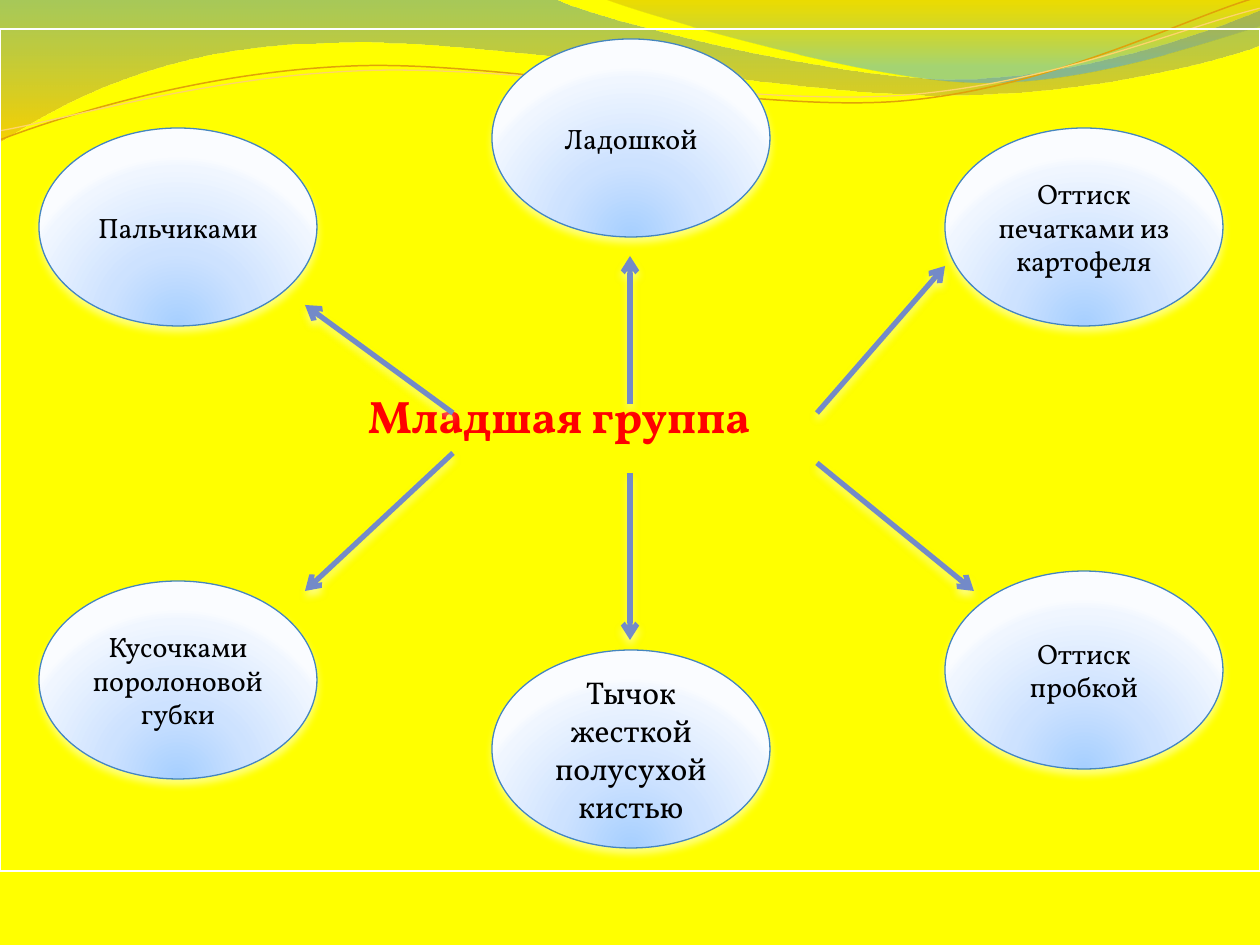
"""Builds a mind map slide of painting techniques for the youngest group."""
from lxml import etree
from pptx import Presentation
from pptx.dml.color import RGBColor
from pptx.enum.shapes import MSO_CONNECTOR, MSO_SHAPE
from pptx.enum.text import MSO_ANCHOR, PP_ALIGN
from pptx.oxml import parse_xml
from pptx.oxml.ns import qn
from pptx.util import Pt

STRAIGHT, OVAL, RECTANGLE = MSO_CONNECTOR.STRAIGHT, MSO_SHAPE.OVAL, MSO_SHAPE.RECTANGLE
TOP, MIDDLE = MSO_ANCHOR.TOP, MSO_ANCHOR.MIDDLE
LEFT, CENTER = PP_ALIGN.LEFT, PP_ALIGN.CENTER
YELLOW = RGBColor(0xFF, 0xFF, 0x00)
WHITE = RGBColor(0xFF, 0xFF, 0xFF)
BLACK = RGBColor(0x00, 0x00, 0x00)
RED = RGBColor(0xFF, 0x00, 0x00)
ARROW_BLUE = RGBColor(0x73, 0x8A, 0xC8)
OVAL_BLUE = RGBColor(0x45, 0x86, 0xBE)
ORANGE = RGBColor(0xE0, 0xA2, 0x09)
PALE_ORANGE = RGBColor(0xFE, 0xD4, 0x6B)
DRAWING = "http://schemas.openxmlformats.org/drawingml/2006/main"
FONT = "Vollkorn"
WIDTH, HEIGHT = 1260, 945
SCALE = 9144000 / WIDTH

TITLE = "Младшая группа"
FRAME = (0, 29, 1260, 842)
TITLE_INSET = (368, 359)
OVAL_SIZE = (278, 198)
TECHNIQUES = [
    ("Пальчиками", 39, 128, 16),
    ("Ладошкой", 492, 39, 16),
    ("Оттиск печатками из картофеля", 945, 128, 16),
    ("Кусочками поролоновой губки", 39, 581, 16),
    ("Тычок жесткой полусухой кистью", 492, 650, 18),
    ("Оттиск пробкой", 945, 571, 16),
]
ARROWS = [
    (453, 413, 305, 305),
    (817, 463, 974, 591),
    (453, 453, 305, 591),
    (817, 413, 945, 266),
    (630, 473, 630, 640),
    (630, 404, 630, 256),
]
OVAL_STOPS = [(0, "A6CFFF", 100), (43, "CDE2FF", 100), (93, "F0F6FF", 100), (100, "FAFCFF", 100)]
OVAL_GLOW = '<a:path path="circle"><a:fillToRect l="50000" t="130000" r="50000" b="-30000"/></a:path>'
DOWNWARD = '<a:lin ang="5400000" scaled="0"/>'
WAVES = [
    ([(0, 0), (554, -1), (600, 21, 837, 79, 955, 79), (1075, 79, 1207, 33, 1260, 11),
      (1261, 45), (1239, 55, 1096, 96, 940, 95), (784, 95, 481, 35, 324, 43),
      (163, 45, 58, 105, -1, 142)],
     [(0, "3B87C8", 45), (100, "F0AB00", 55)]),
    ([(604, -1), (641, 14, 859, 78, 969, 82), (1083, 87, 1211, 40, 1260, 26), (1260, 0)],
     [(0, "C38B00", 30), (80, "39A2FD", 45)]),
]
STRAND_TILT = 357.3
STRANDS = [
    ([(-2, 110), (59, 90, 199, 52, 350, 53), (499, 53, 745, 118, 896, 114),
      (1049, 109, 1184, 45, 1260, 27)], ORANGE, 0.85),
    ([(-2, 101), (57, 94, 207, 57, 357, 58), (509, 58, 750, 112, 902, 108),
      (1052, 104, 1188, 52, 1262, 38)], PALE_ORANGE, 0.75),
]


def px(*lengths):
    return [round(length * SCALE) for length in lengths]


def add_outline(shapes, steps, closed):
    anchors = [px(*step[-2:]) for step in steps]
    builder = shapes.build_freeform(*anchors[0], scale=1.0)
    builder.add_line_segments(anchors[1:], close=closed)
    shape = builder.convert_to_shape()
    shape.shadow.inherit = False
    shape.fill.background()
    segments = list(shape._element.iter(qn("a:lnTo")))
    for segment, step in zip(segments, steps[1:]):
        if len(step) == 6:
            segment.tag = qn("a:cubicBezTo")
            end = segment[0]
            for x, y in (px(*step[:2]), px(*step[2:4])):
                control = etree.Element(qn("a:pt"), x=str(x - shape.left), y=str(y - shape.top))
                end.addprevious(control)
    return shape


def set_gradient(shape, stops, direction):
    shape.fill.background()
    marks = "".join(
        f'<a:gs pos="{place * 1000}"><a:srgbClr val="{color}">'
        f'<a:alpha val="{alpha * 1000}"/></a:srgbClr></a:gs>' for place, color, alpha in stops)
    gradient = parse_xml(f'<a:gradFill xmlns:a="{DRAWING}" rotWithShape="1">'
                         f'<a:gsLst>{marks}</a:gsLst>{direction}</a:gradFill>')
    properties = shape._element.spPr
    properties.replace(properties.find(qn("a:noFill")), gradient)


def set_line(shape, color, width):
    shape.line.color.rgb = color
    shape.line.width = Pt(width)


def add_shadow(shape, color):
    properties = shape._element.spPr
    effects = properties.find(qn("a:effectLst"))
    if effects is None:
        effects = etree.SubElement(properties, qn("a:effectLst"))
    effects.append(parse_xml(
        f'<a:outerShdw xmlns:a="{DRAWING}" blurRad="{Pt(4.5)}" dist="{Pt(3)}" dir="5400000" '
        f'rotWithShape="0"><a:srgbClr val="{color}"><a:alpha val="48000"/></a:srgbClr>'
        '</a:outerShdw>'))


def write(box, text, size=16, color=BLACK, bold=False, align=CENTER, anchor=MIDDLE):
    frame = box.text_frame
    frame.word_wrap = True
    frame.vertical_anchor = anchor
    para = frame.paragraphs[0]
    para.alignment = align
    span = para.add_run()
    span.text = text
    span.font.name = FONT
    span.font.size = Pt(size)
    span.font.bold = bold
    span.font.color.rgb = color


def add_title(shapes):
    box = shapes.add_shape(RECTANGLE, *px(*FRAME))
    box.shadow.inherit = False
    box.fill.background()
    set_line(box, WHITE, 0.75)
    box.text_frame.margin_left, box.text_frame.margin_top = px(*TITLE_INSET)
    write(box, TITLE, size=26, color=RED, bold=True, align=LEFT, anchor=TOP)


def add_arrow(shapes, ends):
    arrow = shapes.add_connector(STRAIGHT, *px(*ends))
    set_line(arrow, ARROW_BLUE, 3)
    etree.SubElement(arrow.line._get_or_add_ln(), qn("a:tailEnd"), type="arrow")
    add_shadow(arrow, WHITE)


def add_technique(shapes, text, left, top, size):
    oval = shapes.add_shape(OVAL, *px(left, top, *OVAL_SIZE))
    oval.shadow.inherit = False
    set_gradient(oval, OVAL_STOPS, OVAL_GLOW)
    set_line(oval, OVAL_BLUE, 0.75)
    add_shadow(oval, WHITE)
    write(oval, text, size=size)


def main():
    deck = Presentation()
    deck.slide_width, deck.slide_height = px(WIDTH, HEIGHT)
    page = deck.slides.add_slide(deck.slide_layouts[6])
    page.background.fill.solid()
    page.background.fill.fore_color.rgb = YELLOW
    shapes = page.shapes
    for steps, stops in WAVES:
        wave = add_outline(shapes, steps, closed=True)
        set_gradient(wave, stops, DOWNWARD)
        wave.line.fill.background()
    for steps, color, width in STRANDS:
        strand = add_outline(shapes, steps, closed=False)
        strand.rotation = STRAND_TILT
        set_line(strand, color, width)
    add_title(shapes)
    for ends in ARROWS:
        add_arrow(shapes, ends)
    for technique in TECHNIQUES:
        add_technique(shapes, *technique)
    deck.save("out.pptx")


if __name__ == "__main__":
    main()
